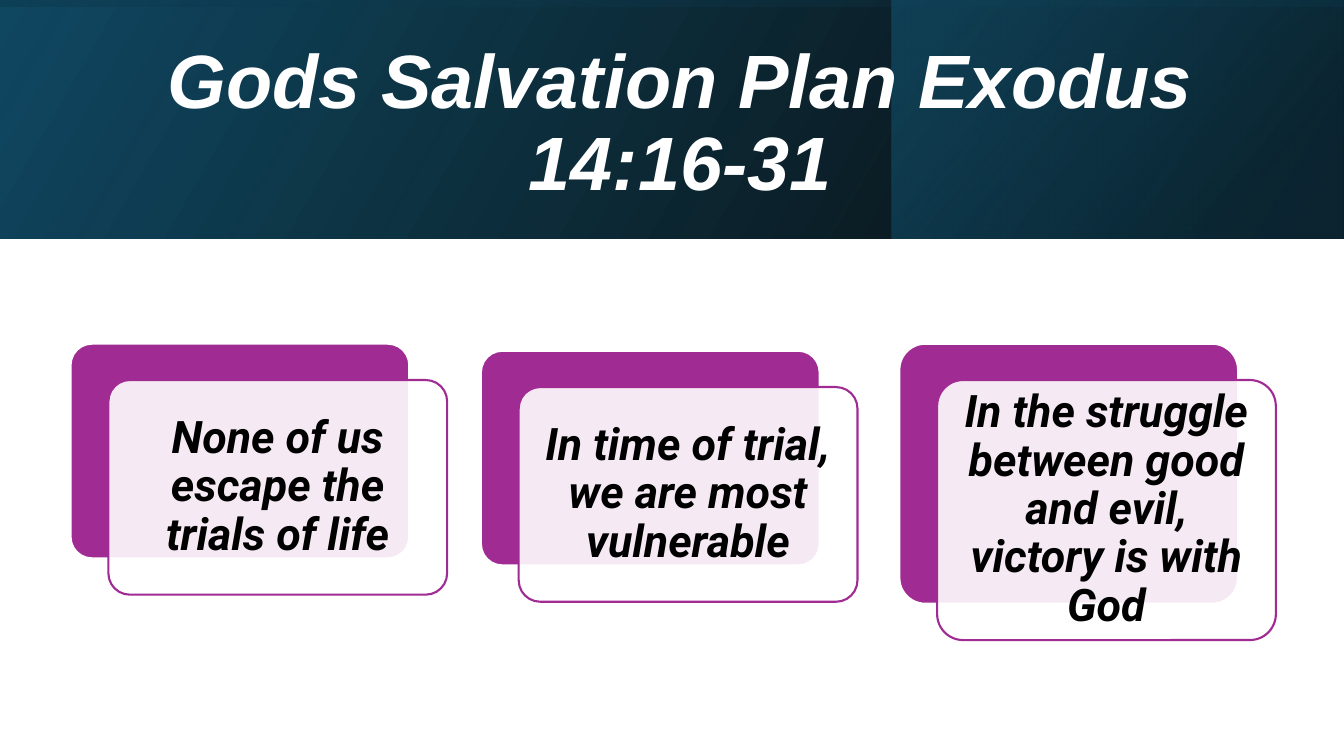
from lxml import etree
from pptx import Presentation
from pptx.dml.color import RGBColor
from pptx.enum.shapes import MSO_SHAPE
from pptx.enum.text import MSO_ANCHOR, PP_ALIGN
from pptx.oxml.ns import qn
from pptx.util import Inches, Pt

RECT, ROUNDED = MSO_SHAPE.RECTANGLE, MSO_SHAPE.ROUNDED_RECTANGLE
MIDDLE, CENTER = MSO_ANCHOR.MIDDLE, PP_ALIGN.CENTER
BLACK, WHITE, PURPLE = "000000", "FFFFFF", "A02B93"

SLIDE_W, SLIDE_H = 13.33, 7.5
BANNER_H = 2.37
CARD_W = 3.36
STEP_X, STEP_Y = 0.375, 0.36  # front panel's shift from the back panel


def rgb(code):
    return RGBColor.from_string(code)


def set_text(shape, text, font_name, size, color):
    """Fill a shape with one centred, bold italic paragraph."""
    frame = shape.text_frame
    frame.word_wrap = True
    frame.vertical_anchor = MIDDLE
    paragraph = frame.paragraphs[0]
    paragraph.text = text
    paragraph.alignment = CENTER
    paragraph.line_spacing = 0.9
    font = paragraph.font
    font.name, font.size = font_name, Pt(size)
    font.bold = font.italic = True
    font.color.rgb = rgb(color)


prs = Presentation()
prs.slide_width, prs.slide_height = Inches(SLIDE_W), Inches(SLIDE_H)
slide = prs.slides.add_slide(prs.slide_layouts[6])
shapes = slide.shapes

# Banner: three mirrored gradient layers, the last one turned on its side.
# Each stop is (position %, colour, opacity %).
turned_x = (SLIDE_W - BANNER_H) / 2
banner_layers = [
    ((0, 0, SLIDE_W, BANNER_H), 0, 30,
     [(0, BLACK, 96), (100, "104862", 100)]),
    ((8.84, 0, 4.48, BANNER_H), 0, 40,
     [(19, "0B3041", 68), (100, "156082", 48)]),
    ((turned_x, -turned_x, BANNER_H, SLIDE_W), 270, 10,
     [(23, "104862", 16), (99, BLACK, 45)]),
]
for box, rotation, angle, stops in banner_layers:
    layer = shapes.add_shape(RECT, *map(Inches, box))
    layer.shadow.inherit = False
    layer.line.fill.background()
    layer.rotation = rotation
    layer._element.spPr.xfrm.set("flipH", "1")
    layer.fill.gradient()
    layer.fill.gradient_angle = angle
    for stop, (position, color, opacity) in zip(layer.fill.gradient_stops, stops):
        stop.position = position / 100
        stop.color.rgb = rgb(color)
    color_tags = layer._element.spPr.iter(qn("a:srgbClr"))
    for color_tag, (position, color, opacity) in zip(color_tags, stops):
        etree.SubElement(color_tag, qn("a:alpha"), val=str(opacity * 1000))

title = shapes.add_textbox(*map(Inches, (0.7, 0.38, 12.09, 1.72)))
set_text(title, "Gods Salvation Plan Exodus 14:16-31", "Arial", 54, WHITE)

# Cards: left, top, height, message
cards = [
    (0.7, 3.41, 2.13, "None of us escape the trials of life"),
    (4.77, 3.48, 2.13, "In time of trial, we are most vulnerable"),
    (8.92, 3.41, 2.58,
     "In the struggle between good and evil, victory is with God"),
]
for left, top, height, message in cards:
    panels = [(left, top, PURPLE, WHITE),
              (left + STEP_X, top + STEP_Y, WHITE, PURPLE)]
    for x, y, fill, outline in panels:
        panel = shapes.add_shape(
            ROUNDED, Inches(x), Inches(y), Inches(CARD_W), Inches(height))
        panel.shadow.inherit = False
        panel.adjustments[0] = 0.1
        panel.fill.solid()
        panel.fill.fore_color.rgb = rgb(fill)
        panel.line.color.rgb = rgb(outline)
        panel.line.width = Pt(1.5)

    # The front panel, drawn last, is see-through and holds the message.
    fill_color = panel._element.spPr.find(qn("a:solidFill")).find(qn("a:srgbClr"))
    etree.SubElement(fill_color, qn("a:alpha"), val="90000")
    frame = panel.text_frame
    frame.margin_left = frame.margin_right = Inches(0.13)
    frame.margin_top = frame.margin_bottom = Inches(0.13)
    set_text(panel, message, "Roboto", 32, BLACK)

prs.save("out.pptx")
